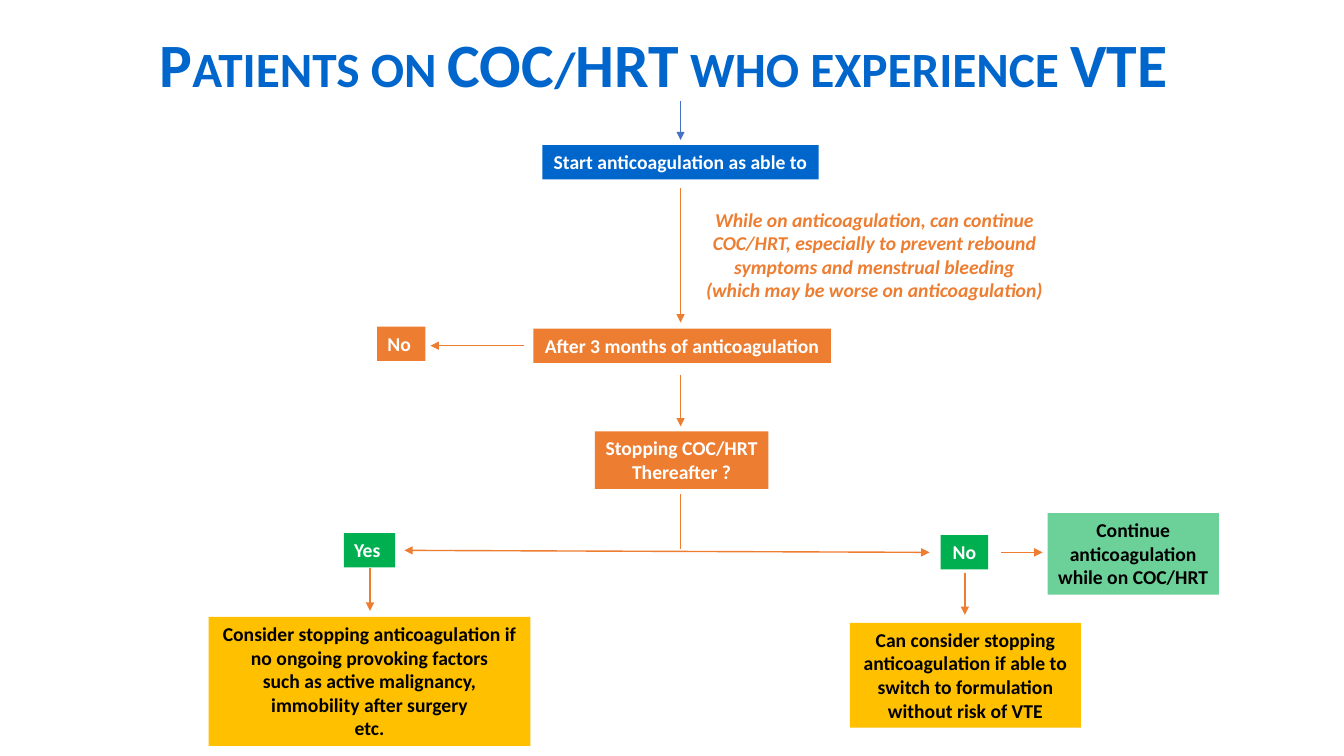
from lxml.etree import SubElement
from pptx import Presentation
from pptx.dml.color import RGBColor
from pptx.enum.shapes import MSO_CONNECTOR, MSO_SHAPE
from pptx.enum.text import MSO_ANCHOR, MSO_AUTO_SIZE, PP_ALIGN
from pptx.oxml.ns import qn
from pptx.util import Inches, Pt

BLUE, ORANGE, GREEN, AMBER = "0066CC", "ED7D31", "00B050", "FFC000"
ARROW_BLUE, WHITE, BLACK = "4472C4", "FFFFFF", "000000"


def color(hex_value):
    """Turn a hex string into a colour."""
    return RGBColor.from_string(hex_value)


def write(shape, lines, ink, size=14, italic=False, wrap=False):
    """Fill a shape with centred bold lines."""
    frame = shape.text_frame
    frame.text = "\n".join(lines)
    frame.word_wrap = wrap
    frame.auto_size = MSO_AUTO_SIZE.SHAPE_TO_FIT_TEXT
    for paragraph in frame.paragraphs:
        paragraph.alignment = PP_ALIGN.CENTER
        font = paragraph.font
        font.name, font.size, font.bold = "Calibri", Pt(size), True
        font.italic = italic
        font.color.rgb = color(ink)


def step(slide, box, lines, fill, ink=WHITE, wrap=False, opacity=None):
    """Draw one filled box of the flowchart."""
    shape = slide.shapes.add_shape(MSO_SHAPE.RECTANGLE, *map(Inches, box))
    shape.shadow.inherit = False
    shape.fill.solid()
    shape.fill.fore_color.rgb = color(fill)
    shape.line.fill.background()
    if opacity:
        tint = shape.fill._xPr.find(".//" + qn("a:srgbClr"))
        SubElement(tint, qn("a:alpha")).set("val", str(opacity * 1000))
    write(shape, lines, ink, wrap=wrap)
    shape.text_frame.vertical_anchor = MSO_ANCHOR.TOP


def arrow(slide, start, end, stroke=ORANGE, ends=("tailEnd",)):
    """Draw a line with triangles at the named ends."""
    line = slide.shapes.add_connector(
        MSO_CONNECTOR.STRAIGHT, *map(Inches, (*start, *end)))
    line.line.color.rgb = color(stroke)
    line.line.width = Pt(1)
    outline = line.line._get_or_add_ln()
    for end_name in ends:
        SubElement(outline, qn("a:" + end_name)).set("type", "triangle")
    SubElement(line._element.spPr, qn("a:effectLst"))


def title(slide, left, top, width, height):
    """Write the heading in small capitals."""
    heading = slide.shapes.add_textbox(*map(Inches, (left, top, width, height)))
    write(heading, ["Patients on COC/HRT who experience VTE"], BLUE, 44, wrap=True)
    heading.text_frame.auto_size = MSO_AUTO_SIZE.NONE
    heading.text_frame.vertical_anchor = MSO_ANCHOR.MIDDLE
    paragraph = heading.text_frame.paragraphs[0]
    paragraph.line_spacing = 0.9
    paragraph._p.pPr.find(qn("a:defRPr")).set("cap", "small")


def trunk(slide, axis, top):
    """Draw the central steps down to the question."""
    arrow(slide, (axis, top), (axis, top + 0.39), ARROW_BLUE)
    step(slide, (axis - 1.37, top + 0.44, 2.74, 0.34),
         ["Start anticoagulation as able to"], BLUE)
    arrow(slide, (axis, top + 0.87), (axis, top + 2.2))
    note = slide.shapes.add_textbox(
        *map(Inches, (axis + 0.14, top + 1.01, 3.57, 1.04)))
    write(note, ["While on anticoagulation, can continue",
                 "COC/HRT, especially to prevent rebound",
                 "symptoms and menstrual bleeding",
                 "(which may be worse on anticoagulation)"], ORANGE, italic=True)
    step(slide, (axis - 1.46, top + 2.26, 2.95, 0.34),
         ["After 3 months of anticoagulation"], ORANGE)
    arrow(slide, (axis - 1.55, top + 2.43), (axis - 2.48, top + 2.43))
    step(slide, (axis - 3.01, top + 2.24, 0.48, 0.34), ["No "], ORANGE)
    arrow(slide, (axis, top + 2.72), (axis, top + 3.23))
    step(slide, (axis - 0.85, top + 3.28, 1.72, 0.57),
         ["Stopping COC/HRT", "Thereafter ?"], ORANGE)


def fork(slide, axis, top):
    """Draw the split from the question to both answers."""
    arrow(slide, (axis, top), (axis, top + 0.55), ends=())
    arrow(slide, (axis - 2.74, top + 0.56), (axis + 2.47, top + 0.58),
          ends=("headEnd", "tailEnd"))


def yes_branch(slide, axis, top):
    """Draw the answer yes and its advice."""
    step(slide, (axis - 0.26, top, 0.51, 0.34), ["Yes "], GREEN)
    arrow(slide, (axis, top + 0.35), (axis, top + 0.77))
    step(slide, (axis - 1.6, top + 0.83, 3.19, 1.28),
         ["Consider stopping anticoagulation if no ongoing provoking factors",
          "such as active malignancy,", "immobility after surgery", "etc."],
         AMBER, BLACK, wrap=True)


def no_branch(slide, axis, top):
    """Draw the answer no and its two options."""
    step(slide, (axis - 0.24, top, 0.47, 0.34), ["No"], GREEN, wrap=True)
    arrow(slide, (axis + 0.36, top + 0.17), (axis + 0.77, top + 0.17))
    step(slide, (axis + 0.82, top - 0.22, 1.7, 0.81),
         ["Continue", "anticoagulation", "while on COC/HRT"],
         GREEN, BLACK, opacity=58)
    arrow(slide, (axis, top + 0.37), (axis, top + 0.79))
    step(slide, (axis - 1.14, top + 0.87, 2.29, 1.04),
         ["Can consider stopping anticoagulation if able to switch to formulation",
          "without risk of VTE"], AMBER, BLACK, wrap=True)


def main():
    """Build the flowchart slide."""
    deck = Presentation()
    deck.slide_width, deck.slide_height = Inches(13.33), Inches(7.5)
    slide = deck.slides.add_slide(deck.slide_layouts[6])
    title(slide, 0.73, 0.13, 11.7, 1.08)
    trunk(slide, 6.75, 1)
    fork(slide, 6.75, 4.9)
    yes_branch(slide, 3.67, 5.29)
    no_branch(slide, 9.57, 5.31)
    deck.save("out.pptx")


if __name__ == "__main__":
    main()
